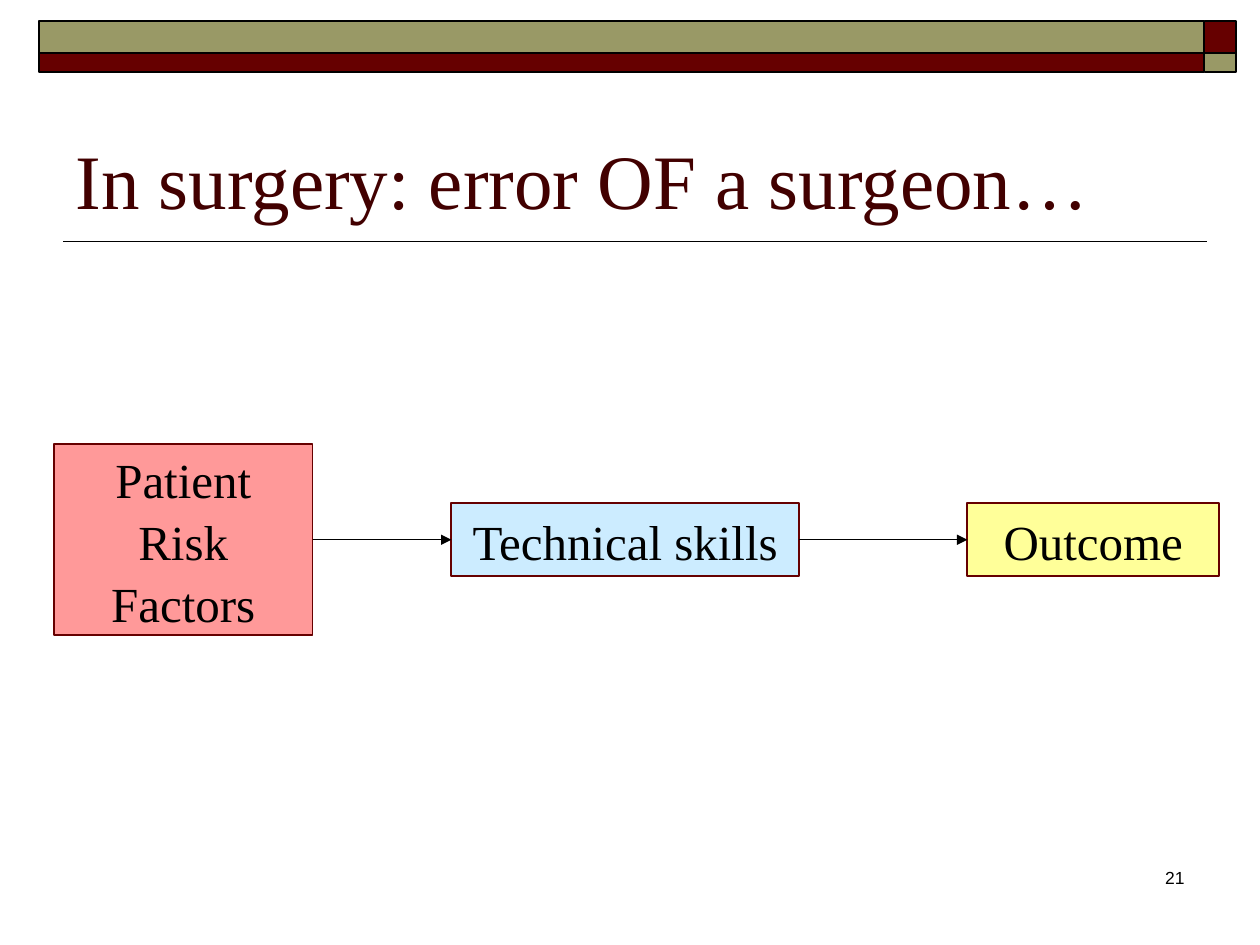
import pptx
import pptx.util
import pptx.dml.color
import pptx.enum.shapes
import pptx.enum.text
import pptx.oxml.ns
from lxml import etree
from pptx.util import Cm, Pt

RGBColor = pptx.dml.color.RGBColor
MAROON = RGBColor(0x66, 0x00, 0x00)
OLIVE = RGBColor(0x99, 0x99, 0x66)
TITLE_BROWN = RGBColor(0x42, 0x00, 0x00)
BLACK = RGBColor(0x00, 0x00, 0x00)
PINK = RGBColor(0xFF, 0x99, 0x99)
PALE_BLUE = RGBColor(0xCC, 0xEC, 0xFF)
PALE_YELLOW = RGBColor(0xFF, 0xFF, 0x99)
PP_ALIGN = pptx.enum.text.PP_ALIGN
MSO_ANCHOR = pptx.enum.text.MSO_ANCHOR


def add_box(left, top, width, height, fill, outline):
    box = slide.shapes.add_shape(
        pptx.enum.shapes.MSO_SHAPE.RECTANGLE, Cm(left), Cm(top), Cm(width), Cm(height))
    box.shadow.inherit = False
    box.fill.solid()
    box.fill.fore_color.rgb = fill
    box.line.color.rgb = outline
    box.line.width = Pt(1)
    return box


def add_line(x1, y1, x2, y2, width):
    line = slide.shapes.add_connector(
        pptx.enum.shapes.MSO_CONNECTOR.STRAIGHT, Cm(x1), Cm(y1), Cm(x2), Cm(y2))
    line.line.color.rgb = BLACK
    line.line.width = Pt(width)
    etree.SubElement(line.element.spPr, pptx.oxml.ns.qn("a:effectLst"))
    return line


presentation = pptx.Presentation()
presentation.slide_width = Cm(25.4)
presentation.slide_height = Cm(19.05)
slide = presentation.slides.add_slide(presentation.slide_layouts[5])

add_line(1.27, 4.87, 24.33, 4.87, 1)
for top, height, bar_color, corner_color in [
    (0.43, 0.64, OLIVE, MAROON),
    (1.07, 0.38, MAROON, OLIVE),
]:
    add_box(0.78, top, 23.5, height, bar_color, BLACK)
    add_box(24.28, top, 0.64, height, corner_color, BLACK)

title = slide.shapes.title
title.left, title.top, title.width, title.height = Cm(1.27), Cm(1.48), Cm(22.86), Cm(3.18)
title.text_frame.text = "In surgery: error OF a surgeon…"
title.text_frame.vertical_anchor = MSO_ANCHOR.BOTTOM
title.text_frame.word_wrap = True
heading = title.text_frame.paragraphs[0]
heading.alignment = PP_ALIGN.LEFT
heading.runs[0].font.name = "Times New Roman"
heading.runs[0].font.size = Pt(44)
heading.runs[0].font.color.rgb = TITLE_BROWN

page_number = slide.shapes.add_textbox(Cm(18.85), Cm(17.35), Cm(5.28), Cm(1.27))
page_number.text_frame.word_wrap = True
page_number.text_frame.text = "21"
number = page_number.text_frame.paragraphs[0]
number.alignment = PP_ALIGN.RIGHT
number.runs[0].font.name = "Arial"
number.runs[0].font.size = Pt(10)
number.runs[0].font.color.rgb = BLACK

flow_middle = 10.88
steps = []
for text, left, width, height, fill in [
    ("Patient Risk Factors", 1.09, 5.21, 3.86, PINK),
    ("Technical skills", 9.1, 7.01, 1.48, PALE_BLUE),
    ("Outcome", 19.5, 5.08, 1.48, PALE_YELLOW),
]:
    step = add_box(left, flow_middle - height / 2, width, height, fill, MAROON)
    step.text_frame.word_wrap = True
    step.text_frame.vertical_anchor = MSO_ANCHOR.MIDDLE
    step.text_frame.text = text
    label = step.text_frame.paragraphs[0]
    label.alignment = PP_ALIGN.CENTER
    label.line_spacing = 1.05
    label.runs[0].font.name = "Times New Roman"
    label.runs[0].font.size = Pt(28)
    label.runs[0].font.color.rgb = BLACK
    steps.append(step)

for source, target in zip(steps, steps[1:]):
    arrow = add_line(0, 0, 0, 0, 0.75)
    arrow.begin_connect(source, 3)
    arrow.end_connect(target, 1)
    etree.SubElement(arrow.line._get_or_add_ln(), pptx.oxml.ns.qn("a:tailEnd"), type="triangle")

presentation.save("out.pptx")
